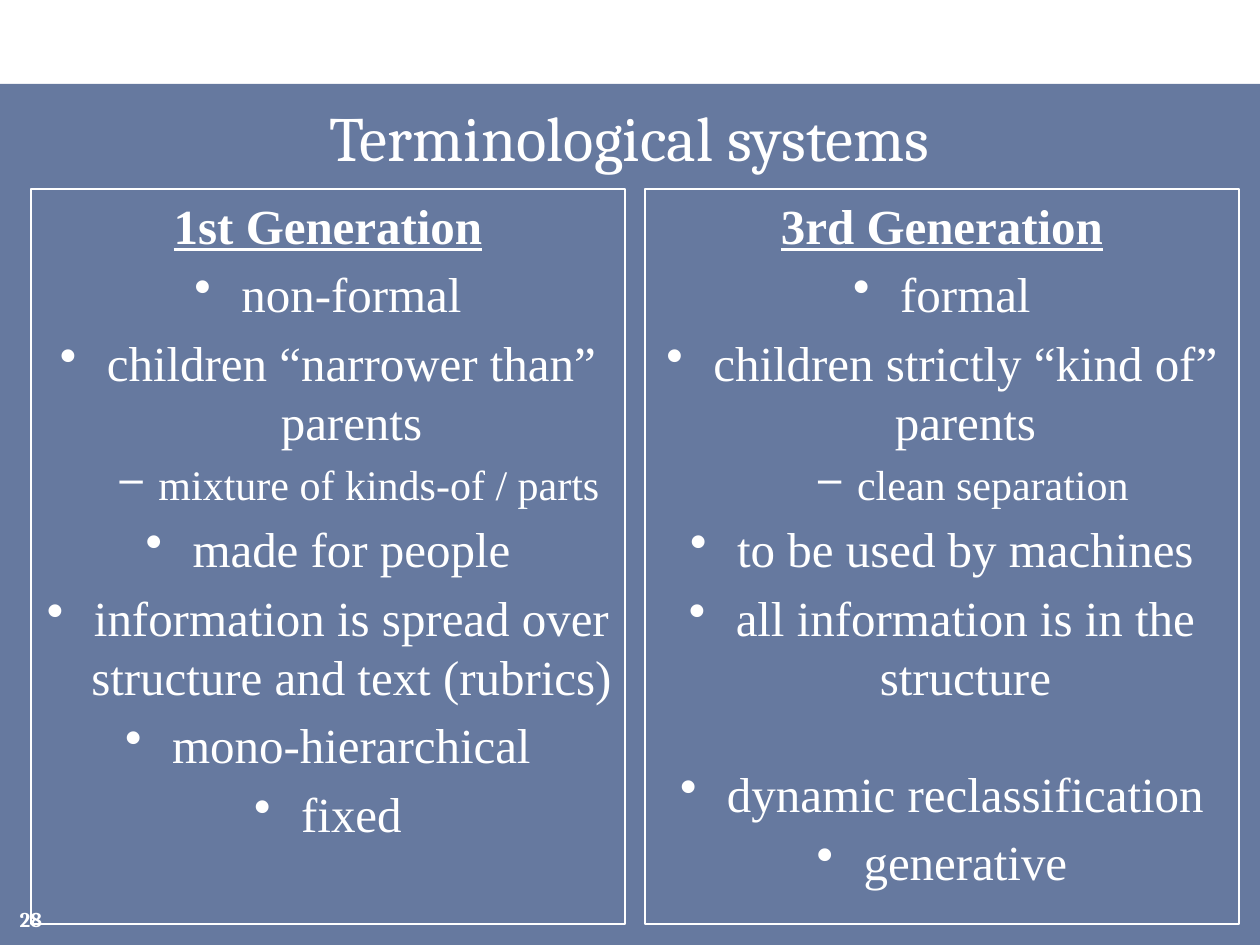
"""Build the slide that compares two generations of terminological systems."""
from lxml.etree import SubElement
from pptx import Presentation
from pptx.dml.color import RGBColor
from pptx.enum.shapes import MSO_SHAPE as SHAPE
from pptx.enum.text import MSO_ANCHOR as ANCHOR, PP_ALIGN as ALIGN
from pptx.oxml.ns import qn
from pptx.util import Emu, Pt

TITLE = "Terminological systems"
PAGE = "28"
COLUMNS = [
    ("1st Generation", [
        (0, "non-formal"),
        (0, "children “narrower than” parents"),
        (1, "mixture of kinds-of / parts"),
        (0, "made for people"),
        (0, "information is spread over structure and text (rubrics)"),
        (0, "mono-hierarchical"),
        (0, "fixed"),
    ]),
    ("3rd Generation", [
        (0, "formal"),
        (0, "children strictly “kind of” parents"),
        (1, "clean separation"),
        (0, "to be used by machines"),
        (0, "all information is in the structure"),
        (0, "dynamic reclassification"),
        (0, "generative"),
    ]),
]
EXTRA_SPACE = {"dynamic reclassification": 27.5}
LEVELS = [("•", 28, 47, 47), ("–", 24, 102, 39)]
WHITE, NAVY = "FFFFFF", "002060"
SERIF, BODY = "Cambria", "Times New Roman"
WIDTH, HEIGHT, BAND_TOP = 1260, 945, 84
BOX_LEFT, BOX_TOP, BOX_WIDTH, BOX_HEIGHT, BOX_STEP = 31, 189, 594, 735, 614


def px(n):
    return Emu(n * 7257)


def color(value):
    return RGBColor.from_string(value)


def style(font, name, size, bold=False):
    font.name, font.size, font.bold = name, Pt(size), bold
    font.color.rgb = color(WHITE)


def add_rect(s, left, top, width, height):
    sp = s.shapes.add_shape(SHAPE.RECTANGLE, px(left), px(top), px(width), px(height))
    sp.shadow.inherit = False
    return sp


def add_label(s, text, box, size, align, anchor, bold=False):
    tf = s.shapes.add_textbox(*map(px, box)).text_frame
    tf.word_wrap = True
    tf.vertical_anchor = anchor
    tf.margin_left = tf.margin_top = tf.margin_right = tf.margin_bottom = 0
    p = tf.paragraphs[0]
    p.text, p.alignment = text, align
    style(p.runs[0].font, SERIF, size, bold)


def add_item(tf, level, text):
    mark, size, margin, hang = LEVELS[level]
    p = tf.add_paragraph()
    p.text, p.level, p.alignment = text, level, ALIGN.CENTER
    p.space_before = Pt(0.2 * size + EXTRA_SPACE.get(text, 0))
    pPr = p._p.get_or_add_pPr()
    pPr.set("marL", str(px(margin)))
    pPr.set("indent", str(-px(hang)))
    SubElement(pPr, qn("a:buChar")).set("char", mark)
    style(p.runs[0].font, BODY, size)


def add_column(s, left, heading, items):
    sp = add_rect(s, left, BOX_TOP, BOX_WIDTH, BOX_HEIGHT)
    sp.fill.background()
    sp.line.color.rgb = color(WHITE)
    sp.line.width = Pt(0.75)
    tf = sp.text_frame
    tf.word_wrap = True
    tf.vertical_anchor = ANCHOR.TOP
    p = tf.paragraphs[0]
    p.text, p.alignment = heading, ALIGN.CENTER
    style(p.runs[0].font, BODY, 28, True)
    p.runs[0].font.underline = True
    for level, text in items:
        add_item(tf, level, text)


def main():
    prs = Presentation()
    prs.slide_width, prs.slide_height = px(WIDTH), px(HEIGHT)
    s = prs.slides.add_slide(prs.slide_layouts[6])
    band = add_rect(s, 0, BAND_TOP, WIDTH, HEIGHT - BAND_TOP)
    band.fill.solid()
    band.fill.fore_color.rgb = color(NAVY)
    fill = band.fill._xPr.find(qn("a:solidFill"))
    SubElement(fill[0], qn("a:alpha")).set("val", "60000")
    band.line.fill.background()
    add_label(s, TITLE, (31, BAND_TOP, 1197, 105), 36, ALIGN.CENTER, ANCHOR.MIDDLE)
    add_label(s, PAGE, (0, 892, 42, 40), 12, ALIGN.RIGHT, ANCHOR.BOTTOM, True)
    for i, (heading, items) in enumerate(COLUMNS):
        add_column(s, BOX_LEFT + i * BOX_STEP, heading, items)
    prs.save("out.pptx")


if __name__ == "__main__":
    main()
